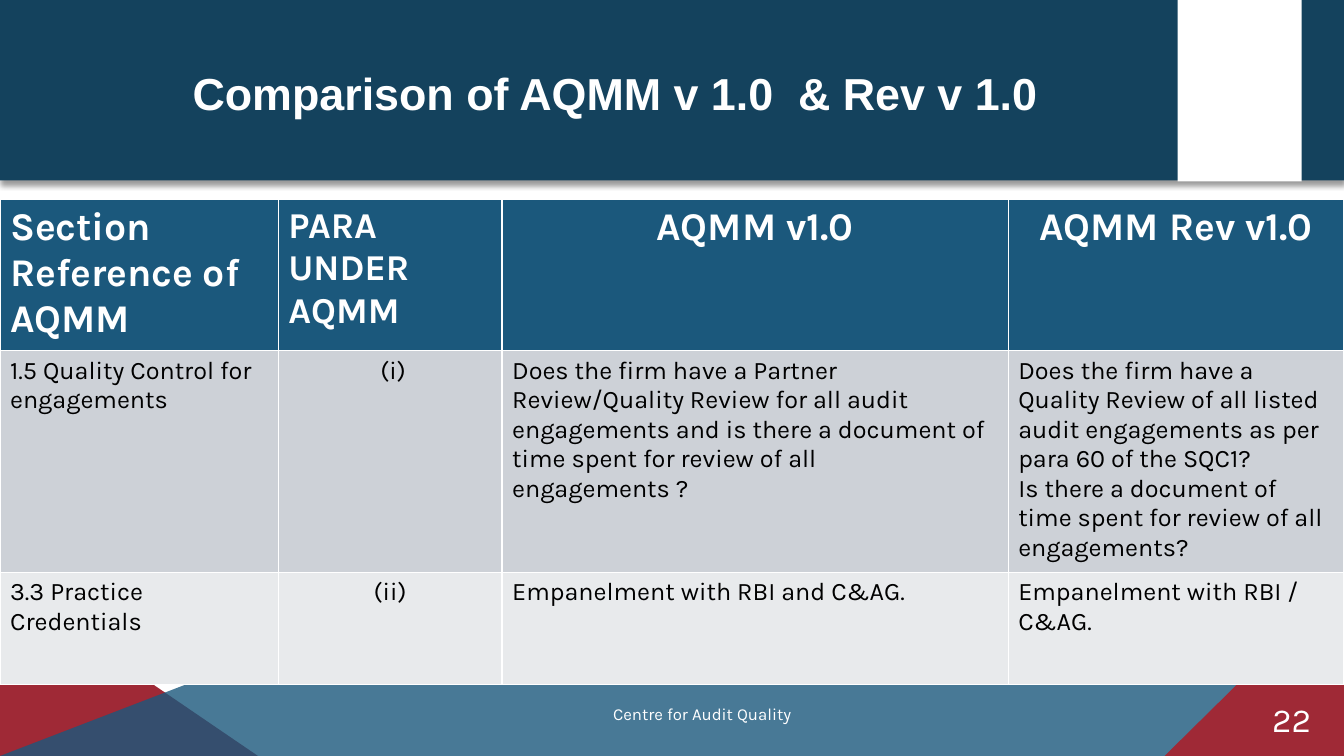
from dataclasses import dataclass

import lxml.etree
import pptx
import pptx.dml.color
import pptx.enum.shapes
import pptx.enum.text
import pptx.oxml
import pptx.oxml.ns
import pptx.util

Inches = pptx.util.Inches
Align = pptx.enum.text.PP_ALIGN
Anchor = pptx.enum.text.MSO_ANCHOR
qn = pptx.oxml.ns.qn


@dataclass(frozen=True)
class Theme:
    white: str = "FFFFFF"
    black: str = "000000"
    navy: str = "14425D"
    blue: str = "1B587C"
    red: str = "9F2936"
    dark: str = "CDD1D7"
    light: str = "E8EAEC"
    body: str = "Karla"
    head: str = "Arial"
    title: int = 32
    large: int = 28
    para: int = 26
    number: int = 24
    cell: int = 18
    small: int = 12


@dataclass(frozen=True)
class Patch:
    points: tuple[tuple[float, float], ...]
    color: str
    alpha: int = 100


@dataclass(frozen=True)
class Block:
    left: float
    width: float
    height: float
    color: str


@dataclass(frozen=True)
class Label:
    text: str
    box: tuple[float, float, float, float]
    size: int


@dataclass(frozen=True)
class Row:
    height: float
    texts: tuple[str, ...]
    sizes: tuple[int, ...]
    aligns: tuple[Align, ...]
    fill: str
    color: str
    bold: bool


THEME = Theme()
WIDTH, HEIGHT = 13.33, 7.5
FOOT = 6.75
COLS = (2.76, 2.22, 5.02, 3.33)
PATCHES = (
    Patch(((0, HEIGHT), (0, FOOT), (1.46, FOOT), (2.56, HEIGHT)), THEME.red),
    Patch(((0, HEIGHT), (1.95, FOOT), (WIDTH, FOOT), (WIDTH, HEIGHT)), THEME.blue, 80),
    Patch(((WIDTH, HEIGHT), (WIDTH, FOOT), (12.31, FOOT), (11.55, HEIGHT)), THEME.red),
)
BAND = Block(0, WIDTH, 1.79, THEME.navy)
PANEL = Block(11.68, 1.23, 1.8, THEME.white)
LABELS = (
    Label("22", (12.29, 6.88, 1.04, 0.5), THEME.number),
    Label("Centre for Audit Quality", (2.26, 6.93, 9.41, 0.3), THEME.small),
)
BODY_SIZES = (THEME.cell,) * 4
BODY_ALIGNS = (Align.LEFT, Align.CENTER, Align.LEFT, Align.LEFT)
ROWS = (
    Row(1.5, ("Section Reference of AQMM", "PARA UNDER AQMM", "AQMM v1.0", "AQMM Rev v1.0"),
        (THEME.large, THEME.para, THEME.large, THEME.large),
        (Align.LEFT, Align.LEFT, Align.CENTER, Align.CENTER), THEME.blue, THEME.white, True),
    Row(2.2, ("1.5 Quality Control for engagements", " (i)",
              "Does the firm have a Partner Review/Quality Review for all audit engagements "
              "and is there a document of time spent for review of all engagements ?",
              "Does the firm have a Quality Review of all listed audit engagements as per "
              "para 60 of the SQC1?\nIs there a document of time spent for review of all "
              "engagements?"),
        BODY_SIZES, BODY_ALIGNS, THEME.dark, THEME.black, False),
    Row(1.11, ("3.3 Practice Credentials", "(ii)", "Empanelment with RBI and C&AG.",
               "Empanelment with RBI / C&AG."),
        BODY_SIZES, BODY_ALIGNS, THEME.light, THEME.black, False),
)


def paint(fill, color: str) -> None:
    fill.solid()
    fill.fore_color.rgb = pptx.dml.color.RGBColor.from_string(color)


def write(frame, text: str, size: int, color: str, align: Align,
          bold: bool = False, font: str = THEME.body) -> None:
    frame.word_wrap = True
    para = frame.paragraphs[0]
    para.alignment = align
    for index, line in enumerate(text.split("\n")):
        if index:
            para.add_line_break()
        run = para.add_run()
        run.text = line
        run.font.name = font
        run.font.size = pptx.util.Pt(size)
        run.font.bold = bold
        run.font.color.rgb = pptx.dml.color.RGBColor.from_string(color)


def finish(shape, color: str) -> None:
    paint(shape.fill, color)
    shape.line.fill.background()
    shape.shadow.inherit = False


def draw_patch(slide, patch: Patch) -> None:
    points = [(Inches(x), Inches(y)) for x, y in patch.points]
    pen = slide.shapes.build_freeform(*points[0])
    pen.add_line_segments(points[1:], close=True)
    shape = pen.convert_to_shape()
    finish(shape, patch.color)
    if patch.alpha < 100:
        tint = shape.fill._xPr.find(".//" + qn("a:srgbClr"))
        lxml.etree.SubElement(tint, qn("a:alpha"), val=str(patch.alpha * 1000))


def draw_block(slide, block: Block):
    shape = slide.shapes.add_shape(
        pptx.enum.shapes.MSO_SHAPE.RECTANGLE,
        Inches(block.left), 0, Inches(block.width), Inches(block.height))
    finish(shape, block.color)
    return shape


def add_shade(shape) -> None:
    effects = shape._element.spPr.find(qn("a:effectLst"))
    shade = lxml.etree.SubElement(
        effects, qn("a:outerShdw"), blurRad=str(pptx.util.Pt(4)),
        dist=str(pptx.util.Pt(3)), dir="5400000", rotWithShape="0")
    tint = lxml.etree.SubElement(shade, qn("a:srgbClr"), val=THEME.black)
    lxml.etree.SubElement(tint, qn("a:alpha"), val="40000")


def draw_label(slide, label: Label) -> None:
    box = slide.shapes.add_textbox(*map(Inches, label.box))
    write(box.text_frame, label.text, label.size, THEME.white, Align.CENTER)


def edge_cell(cell) -> None:
    props = cell._tc.get_or_add_tcPr()
    for side in ("lnL", "lnR", "lnT", "lnB"):
        line = lxml.etree.SubElement(props, qn("a:" + side), w=str(pptx.util.Pt(1)))
        fill = lxml.etree.SubElement(line, qn("a:solidFill"))
        lxml.etree.SubElement(fill, qn("a:srgbClr"), val=THEME.white)


def draw_table(slide, rows: tuple[Row, ...]) -> None:
    total = sum(row.height for row in rows)
    table = slide.shapes.add_table(
        len(rows), len(COLS), 0, Inches(1.98), Inches(WIDTH), Inches(total)).table
    for col, width in zip(table.columns, COLS):
        col.width = Inches(width)
    for line, row in zip(table.rows, rows):
        line.height = Inches(row.height)
        for cell, text, size, align in zip(line.cells, row.texts, row.sizes, row.aligns):
            edge_cell(cell)
            paint(cell.fill, row.fill)
            write(cell.text_frame, text, size, row.color, align, row.bold)


def set_title(slide, text: str) -> None:
    title = slide.shapes.title
    title.left, title.top, title.width, title.height = map(Inches, (0.53, 0.6, 11.15, 0.64))
    title.text_frame.vertical_anchor = Anchor.MIDDLE
    write(title.text_frame, text, THEME.title, THEME.white, Align.CENTER, True, THEME.head)
    slide.shapes._spTree.append(title._element)


def main() -> None:
    deck = pptx.Presentation()
    deck.slide_width, deck.slide_height = Inches(WIDTH), Inches(HEIGHT)
    slide = deck.slides.add_slide(deck.slide_layouts[5])
    for patch in PATCHES:
        draw_patch(slide, patch)
    add_shade(draw_block(slide, BAND))
    draw_block(slide, PANEL)
    for label in LABELS:
        draw_label(slide, label)
    draw_table(slide, ROWS)
    set_title(slide, "Comparison of AQMM v 1.0  & Rev v 1.0")
    deck.save("out.pptx")


if __name__ == "__main__":
    main()
